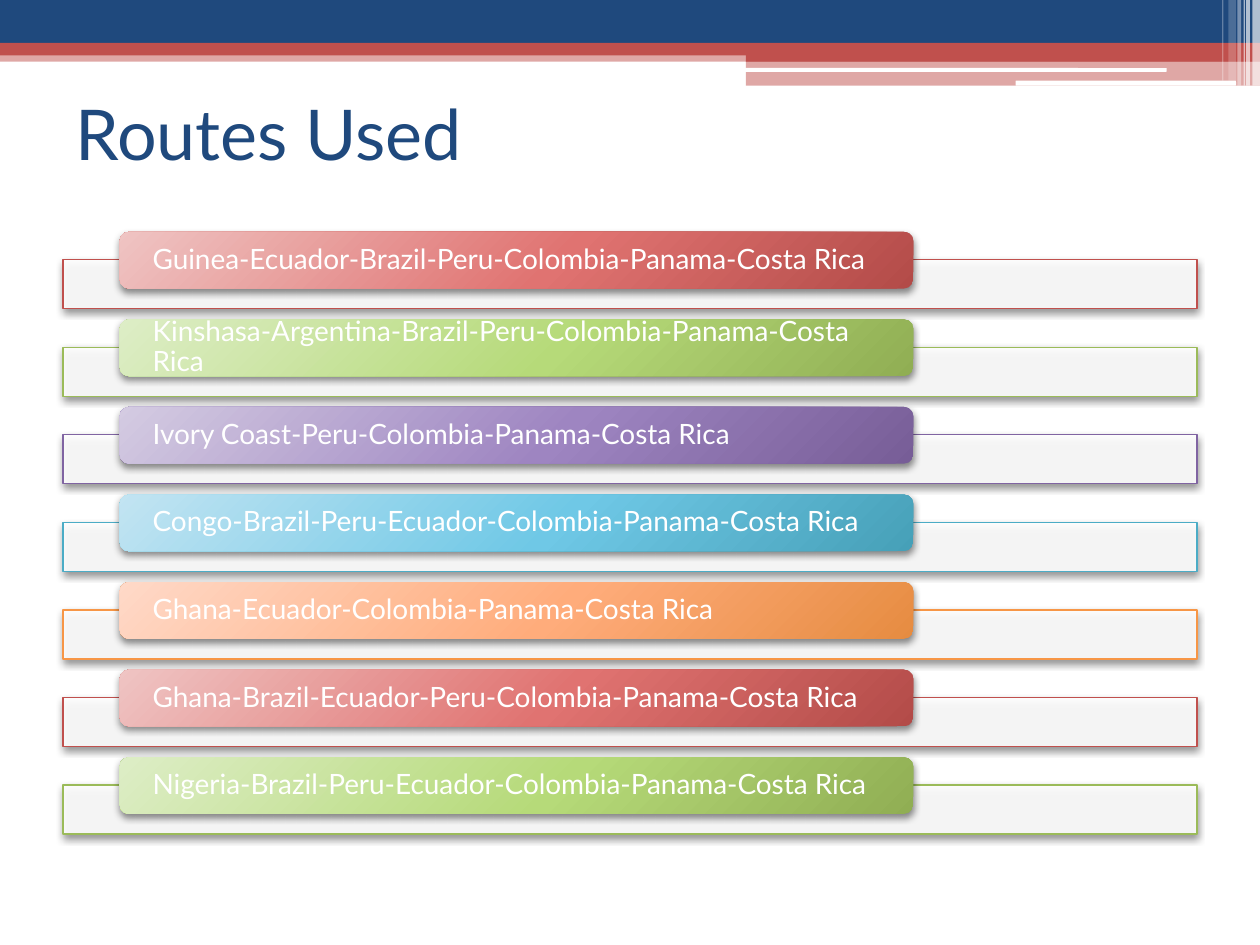
"""Build the "Routes Used" slide: a banded header and a list of route pills."""
from pptx import Presentation
from pptx.dml.color import RGBColor
from pptx.enum.shapes import MSO_SHAPE
from pptx.enum.text import MSO_ANCHOR, PP_ALIGN
from pptx.oxml import parse_xml
from pptx.oxml.ns import nsdecls, qn
from pptx.util import Inches, Pt

NAVY = RGBColor(0x1F, 0x49, 0x7D)
RED = RGBColor(0xC0, 0x50, 0x4D)
GREEN = RGBColor(0x9B, 0xBB, 0x59)
PURPLE = RGBColor(0x80, 0x64, 0xA2)
TEAL = RGBColor(0x4B, 0xAC, 0xC6)
ORANGE = RGBColor(0xF7, 0x96, 0x46)
WHITE = RGBColor(0xFF, 0xFF, 0xFF)
FONT = "Lato"

TITLE = "Routes Used"
ROUTES = [
    "Guinea-Ecuador-Brazil-Peru-Colombia-Panama-Costa Rica",
    "Kinshasa-Argentina-Brazil-Peru-Colombia-Panama-Costa Rica",
    "Ivory Coast-Peru-Colombia-Panama-Costa Rica",
    "Congo-Brazil-Peru-Ecuador-Colombia-Panama-Costa Rica",
    "Ghana-Ecuador-Colombia-Panama-Costa Rica",
    "Ghana-Brazil-Ecuador-Peru-Colombia-Panama-Costa Rica",
    "Nigeria-Brazil-Peru-Ecuador-Colombia-Panama-Costa Rica",
]
THEMES = [
    (RED, ("EFC4C3", "E07371", "B34B48")),
    (GREEN, ("DDEDC6", "B6DA79", "90AE53")),
    (PURPLE, ("D4CBE2", "9E85C1", "775D97")),
    (TEAL, ("C2E4F2", "6FC8E6", "46A0B8")),
    (ORANGE, ("FFD9C8", "FFAC7B", "E68C41")),
]
GRADIENT_STOPS = (0, 55, 100)
HEADER = [
    (MSO_SHAPE.RECTANGLE, (0, 0.4, 10, 0.09), RED, 50),
    (MSO_SHAPE.RECTANGLE, (0, 0, 10, 0.34), NAVY, 100),
    (MSO_SHAPE.RECTANGLE, (0, 0.34, 10, 0.1), RED, 100),
    (MSO_SHAPE.RECTANGLE, (5.92, 0.39, 4.08, 0.1), RED, 100),
    (MSO_SHAPE.RECTANGLE, (5.92, 0.48, 4.08, 0.2), RED, 50),
    (MSO_SHAPE.ROUNDED_RECTANGLE, (5.91, 0.54, 3.35, 0.03), WHITE, 100),
    (MSO_SHAPE.ROUNDED_RECTANGLE, (8.06, 0.64, 1.75, 0.04), WHITE, 100),
]
STRIPES = [
    (9.94, 0.06, 0.68, 65),
    (9.89, 0.03, 0.68, 65),
    (9.87, 0.01, 0.68, 60),
    (9.82, 0.03, 0.68, 40),
    (9.75, 0.06, 0.64, 20),
    (9.7, 0.01, 0.64, 30),
]
FIRST_BAR, LAST_BAR = 2.06, 6.23
PITCH = (LAST_BAR - FIRST_BAR) / (len(ROUTES) - 1)
PILL_RISE = 0.22


def add_block(s, kind, box, color, opacity=100):
    sp = s.shapes.add_shape(kind, *map(Inches, box))
    sp.shadow.inherit = False
    sp.line.fill.background()
    sp.fill.solid()
    sp.fill.fore_color.rgb = color
    if opacity < 100:
        clr = sp._element.spPr.find(qn("a:solidFill"))[0]
        clr.append(parse_xml(f'<a:alpha {nsdecls("a")} val="{opacity * 1000}"/>'))
    return sp


def add_shadow(sp):
    sp._element.spPr.find(qn("a:effectLst")).append(parse_xml(
        f'<a:outerShdw {nsdecls("a")} blurRad="{Pt(4)}" dist="{Pt(2)}" dir="5400000" rotWithShape="0">'
        '<a:srgbClr val="000000"><a:alpha val="45000"/></a:srgbClr></a:outerShdw>'))


def set_gradient(sp, colors):
    stops = "".join(f'<a:gs pos="{pos * 1000}"><a:srgbClr val="{color}"/></a:gs>'
                    for pos, color in zip(GRADIENT_STOPS, colors))
    spPr = sp._element.spPr
    spPr.replace(spPr.find(qn("a:solidFill")), parse_xml(
        f'<a:gradFill {nsdecls("a")} rotWithShape="1"><a:gsLst>{stops}</a:gsLst><a:path path="circle">'
        '<a:fillToRect l="-40000" t="-90000" r="140000" b="190000"/></a:path></a:gradFill>'))


def add_text(tf, text, size, color):
    tf.word_wrap = True
    tf.vertical_anchor = MSO_ANCHOR.MIDDLE
    p = tf.paragraphs[0]
    p.alignment = PP_ALIGN.LEFT
    r = p.add_run()
    r.text = text
    r.font.name = FONT
    r.font.size = Pt(size)
    r.font.color.rgb = color
    return p


def add_route(s, top, route, color, gradient):
    bar = add_block(s, MSO_SHAPE.RECTANGLE, (0.5, top, 9, 0.39), WHITE, 90)
    bar.line.color.rgb = color
    bar.line.width = Pt(0.75)
    add_shadow(bar)
    pill = add_block(s, MSO_SHAPE.ROUNDED_RECTANGLE, (0.95, top - PILL_RISE, 6.3, 0.45), color)
    set_gradient(pill, gradient)
    add_shadow(pill)
    tf = pill.text_frame
    tf.margin_left = tf.margin_right = Inches(0.24)
    tf.margin_top = tf.margin_bottom = 0
    add_text(tf, route, 16, WHITE).line_spacing = 0.9


def main():
    prs = Presentation()
    prs.slide_width, prs.slide_height = Inches(10), Inches(7.5)
    s = prs.slides.add_slide(prs.slide_layouts[5])
    for block in HEADER:
        add_block(s, *block)
    for left, width, height, opacity in STRIPES:
        add_block(s, MSO_SHAPE.RECTANGLE, (left, 0, width, height), WHITE, opacity)
    title = s.shapes.title
    title.left, title.top, title.width, title.height = map(Inches, (0.5, 0.47, 9, 1.17))
    add_text(title.text_frame, TITLE, 40, NAVY)
    for i, route in enumerate(ROUTES):
        add_route(s, FIRST_BAR + i * PITCH, route, *THEMES[i % len(THEMES)])
    prs.save("out.pptx")


if __name__ == "__main__":
    main()
